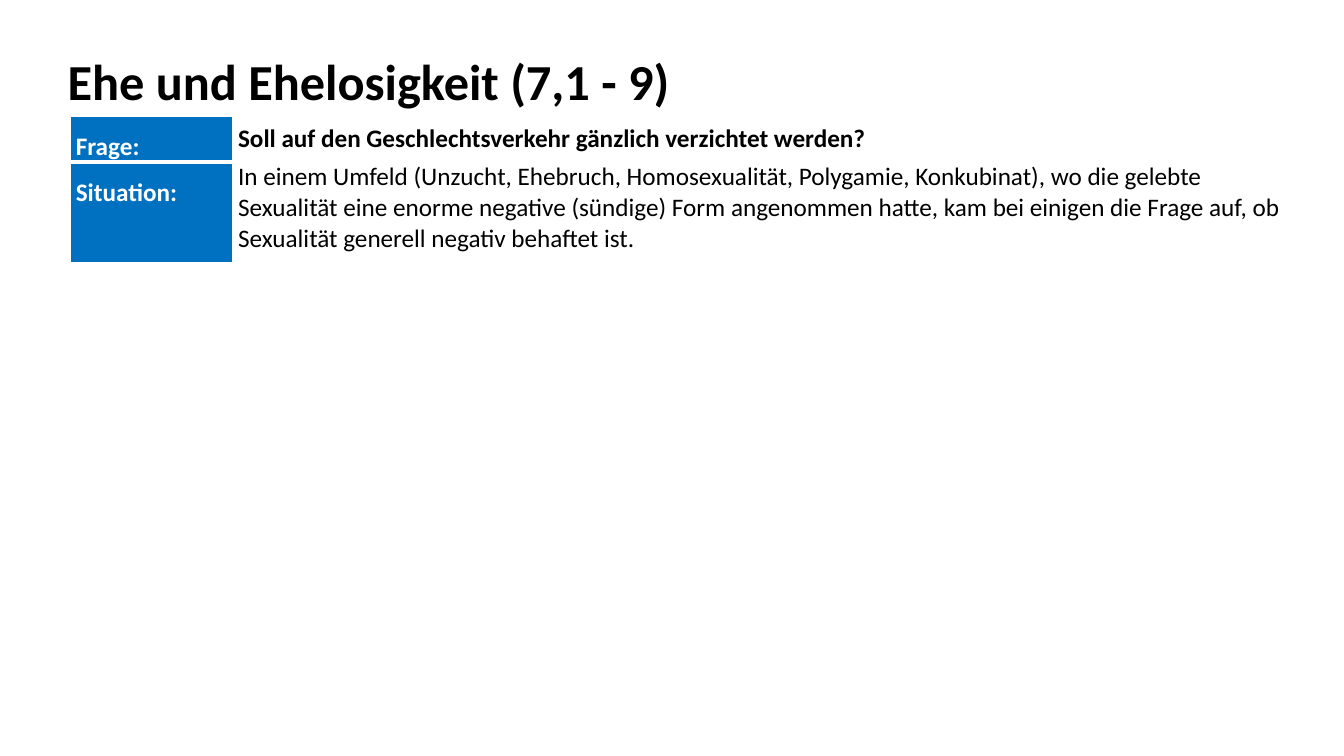
from dataclasses import dataclass

from lxml.etree import fromstring
from pptx import Presentation
from pptx.dml.color import RGBColor
from pptx.enum.text import MSO_ANCHOR, MSO_AUTO_SIZE, PP_ALIGN
from pptx.oxml.ns import nsdecls
from pptx.util import Cm, Pt


@dataclass(frozen=True)
class Theme:
    font: str = "Calibri"
    black: str = "000000"
    white: str = "FFFFFF"
    blue: str = "0070C0"
    head: int = 36
    body: int = 18
    thin: int = 1
    thick: int = 3


class Page:
    def __init__(self, deck, theme):
        self.theme = theme
        self.slide = deck.slides.add_slide(deck.slide_layouts[5])

    def style(self, para, size, color, bold):
        font = para.font
        font.name, font.size, font.bold = self.theme.font, Pt(size), bold
        font.color.rgb = RGBColor.from_string(color)
        para.alignment = PP_ALIGN.LEFT

    def title(self, text, left, top, width, height):
        shape = self.slide.shapes.title
        shape.left, shape.top = Cm(left), Cm(top)
        shape.width, shape.height = Cm(width), Cm(height)
        frame = shape.text_frame
        frame.text = text
        frame.word_wrap = False
        frame.auto_size = MSO_AUTO_SIZE.SHAPE_TO_FIT_TEXT
        frame.vertical_anchor = MSO_ANCHOR.TOP
        para = frame.paragraphs[0]
        para.line_spacing = 1.0
        para.space_before = Pt(0)
        self.style(para, self.theme.head, self.theme.black, True)

    def edge(self, cell, sides):
        props = cell._tc.get_or_add_tcPr()
        for spot, (side, width) in enumerate(sides.items()):
            props.insert(spot, fromstring(
                f'<a:ln{side} {nsdecls("a")} w="{Pt(width)}"><a:solidFill>'
                f'<a:srgbClr val="{self.theme.white}"/></a:solidFill></a:ln{side}>'))

    def cell(self, cell, text, fill, color, bold, space, top):
        cell.text = text
        cell.margin_left = cell.margin_right = Cm(0.13)
        cell.margin_top, cell.margin_bottom = Cm(top), Cm(0)
        cell.fill.solid()
        cell.fill.fore_color.rgb = RGBColor.from_string(fill)
        para = cell.text_frame.paragraphs[0]
        para.line_spacing = space
        self.style(para, self.theme.body, color, bold)

    def table(self, rows, left, top, widths, heights):
        look = self.theme
        grid = self.slide.shapes.add_table(
            len(rows), len(widths), Cm(left), Cm(top),
            Cm(sum(widths)), Cm(sum(heights))).table
        for col, width in zip(grid.columns, widths):
            col.width = Cm(width)
        for num, (label, text, bold, inset) in enumerate(rows):
            grid.rows[num].height = Cm(heights[num])
            name, note = grid.cell(num, 0), grid.cell(num, 1)
            self.cell(name, label, look.blue, look.white, True, 1.5, 0)
            self.cell(note, text, look.white, look.black, bold, 1.0, inset)
            sides = {"L": look.thin, "R": look.thin,
                     "T": look.thick if num else look.thin,
                     "B": look.thin if num else look.thick}
            for cell in (name, note):
                self.edge(cell, sides)


def main():
    deck = Presentation()
    deck.slide_width, deck.slide_height = Cm(33.87), Cm(19.05)
    page = Page(deck, Theme())
    page.title("Ehe und Ehelosigkeit (7,1 - 9)", 1.45, 1.14, 15.85, 1.8)
    page.table([
        ("Frage:", "Soll auf den Geschlechtsverkehr gänzlich verzichtet werden?",
         True, 0.17),
        ("Situation:",
         "In einem Umfeld (Unzucht, Ehebruch, Homosexualität, Polygamie, "
         "Konkubinat), wo die gelebte Sexualität eine enorme negative (sündige) "
         "Form angenommen hatte, kam bei einigen die Frage auf, ob Sexualität "
         "generell negativ behaftet ist.", False, 0),
    ], 1.78, 2.93, (4.09, 26.75), (1.07, 2.54))
    deck.save("out.pptx")


if __name__ == "__main__":
    main()
